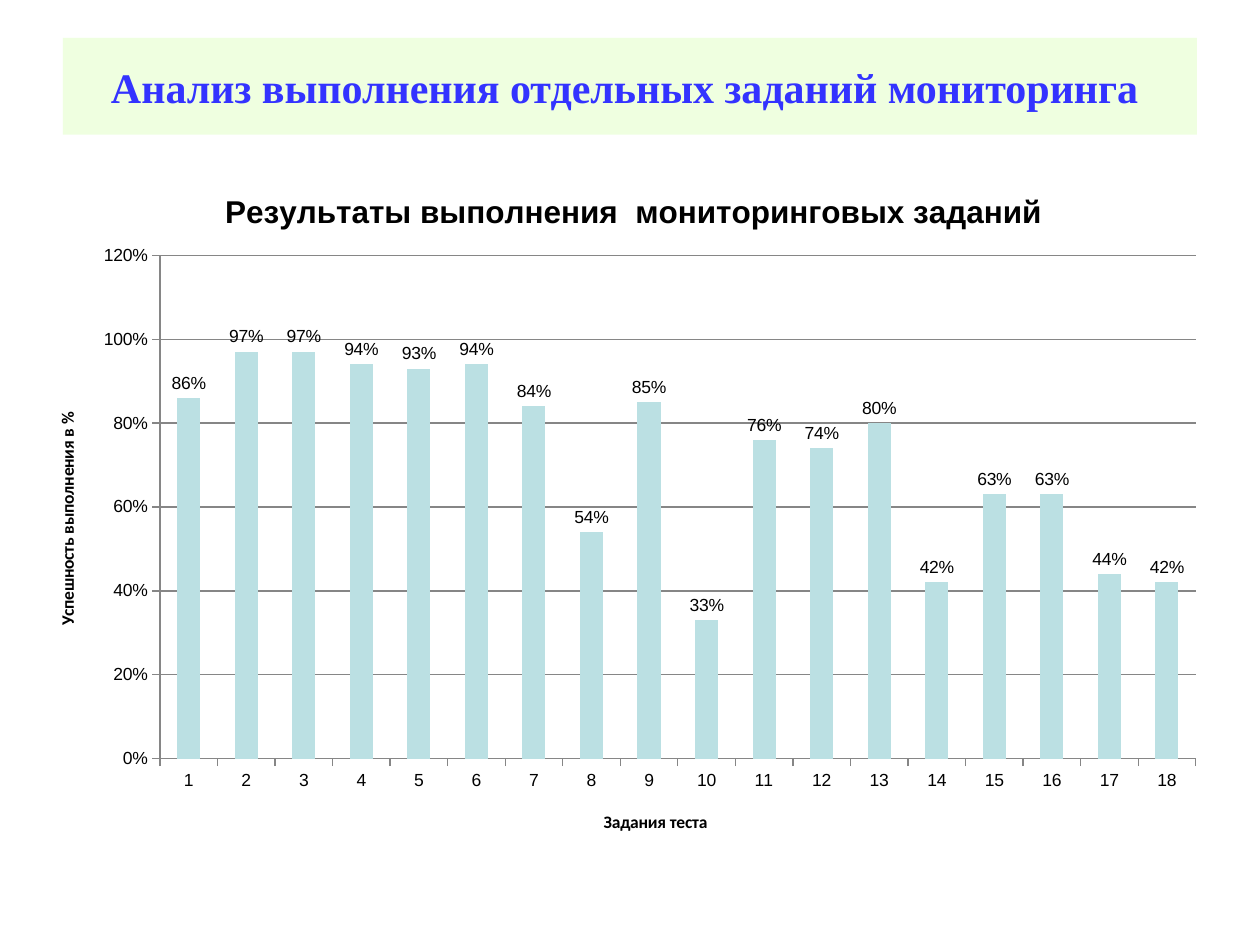
import lxml.etree
import pptx
import pptx.chart.data
import pptx.dml.color
import pptx.enum.chart
import pptx.enum.shapes
import pptx.enum.text
import pptx.oxml
import pptx.oxml.ns
import pptx.util

HEADING = "Анализ выполнения отдельных заданий мониторинга "
CHART_TITLE = "Результаты выполнения  мониторинговых заданий"
TASK_AXIS_TITLE = "Задания теста"
SUCCESS_AXIS_TITLE = "Успешность выполнения в %"
SUCCESS_PERCENT = [86, 97, 97, 94, 93, 94, 84, 54, 85,
                   33, 76, 74, 80, 42, 63, 63, 44, 42]

THEME = {
    "banner": "CCFF99", "banner_opacity": 30, "heading": "3333FF",
    "text": "000000", "bar": "BBE0E3", "line": "868686",
    "heading_font": "Times New Roman", "chart_font": "Arial", "axis_font": "Calibri",
    "heading_size": 24, "title_size": 18, "label_size": 10, "line_width": 0.75,
}

Inches = pptx.util.Inches
qn = pptx.oxml.ns.qn


def color(name):
    return pptx.dml.color.RGBColor.from_string(THEME[name])


def style_font(font, face="chart_font", size="label_size", ink="text", bold=False):
    font.name = THEME[face]
    font.size = pptx.util.Pt(THEME[size])
    font.bold = bold
    font.color.rgb = color(ink)


def write_text(frame, text, **style):
    para = frame.paragraphs[0]
    para.alignment = pptx.enum.text.PP_ALIGN.CENTER
    span = para.add_run()
    span.text = text
    style_font(span.font, bold=True, **style)


def place(element, **settings):
    """Give a chart part a manual layout, in fractions of the chart's size."""
    for old in element.findall(qn("c:layout")):
        element.remove(old)
    layout = lxml.etree.Element(qn("c:layout"))
    manual = lxml.etree.SubElement(layout, qn("c:manualLayout"))
    for tag, value in settings.items():
        lxml.etree.SubElement(manual, qn("c:" + tag)).set("val", str(value))
    text = element.find(qn("c:tx"))
    element.insert(0 if text is None else 1, layout)


def add_title(owner, text, x, y, **style):
    title = owner.chart_title if hasattr(owner, "chart_title") else owner.axis_title
    write_text(title.text_frame, text, **style)
    place(title._element, xMode="edge", yMode="edge", x=x, y=y)


def style_line(line):
    line.color.rgb = color("line")
    line.width = pptx.util.Pt(THEME["line_width"])


def add_banner(slide):
    box = slide.shapes.add_shape(pptx.enum.shapes.MSO_SHAPE.RECTANGLE,
                                 Inches(0.5), Inches(0.3), Inches(9), Inches(0.77))
    box.shadow.inherit = False
    box.line.fill.background()
    box.fill.solid()
    box.fill.fore_color.rgb = color("banner")
    tint = box._element.spPr.find(qn("a:solidFill"))[0]
    opacity = lxml.etree.SubElement(tint, qn("a:alpha"))
    opacity.set("val", str(THEME["banner_opacity"] * 1000))
    box.text_frame.word_wrap = True
    box.text_frame.vertical_anchor = pptx.enum.text.MSO_ANCHOR.MIDDLE
    write_text(box.text_frame, HEADING, face="heading_font",
               size="heading_size", ink="heading")


def add_results_chart(slide):
    data = pptx.chart.data.CategoryChartData(number_format="0%")
    data.categories = [str(task + 1) for task in range(len(SUCCESS_PERCENT))]
    data.add_series("Series 1", [percent / 100 for percent in SUCCESS_PERCENT])
    chart = slide.shapes.add_chart(
        pptx.enum.chart.XL_CHART_TYPE.COLUMN_CLUSTERED,
        Inches(0.23), Inches(1.25), Inches(9.45), Inches(5.55), data).chart
    style_font(chart.font)
    chart.has_legend = False
    add_title(chart, CHART_TITLE, 0.16, 0.04, size="title_size")
    add_title(chart.category_axis, TASK_AXIS_TITLE, 0.48, 0.93, face="axis_font")
    add_title(chart.value_axis, SUCCESS_AXIS_TITLE, 0.02, 0.36, face="axis_font")
    place(chart._chartSpace.chart.plotArea, layoutTarget="inner",
          xMode="edge", yMode="edge", x=0.11, y=0.14, w=0.87, h=0.72)

    for axis in (chart.category_axis, chart.value_axis):
        axis.major_tick_mark = pptx.enum.chart.XL_TICK_MARK.OUTSIDE
        style_font(axis.tick_labels.font)
        style_line(axis.format.line)
    scale = chart.value_axis
    scale.minimum_scale, scale.maximum_scale, scale.major_unit = 0, 1.2, 0.2
    scale.tick_labels.number_format = "0%"
    scale.tick_labels.number_format_is_linked = False
    scale.has_major_gridlines = True
    style_line(scale.major_gridlines.format.line)

    plot = chart.plots[0]
    plot.gap_width = 150
    plot.vary_by_categories = False
    bars = plot.series[0]
    bars.format.fill.solid()
    bars.format.fill.fore_color.rgb = color("bar")
    labels = bars.data_labels
    labels.show_value = True
    labels.number_format = "0%"
    labels.number_format_is_linked = False
    labels.position = pptx.enum.chart.XL_LABEL_POSITION.OUTSIDE_END
    style_font(labels.font)


def main():
    deck = pptx.Presentation()
    deck.slide_width, deck.slide_height = Inches(10), Inches(7.5)
    page = deck.slides.add_slide(deck.slide_layouts[6])
    add_banner(page)
    add_results_chart(page)
    deck.save("out.pptx")


if __name__ == "__main__":
    main()
